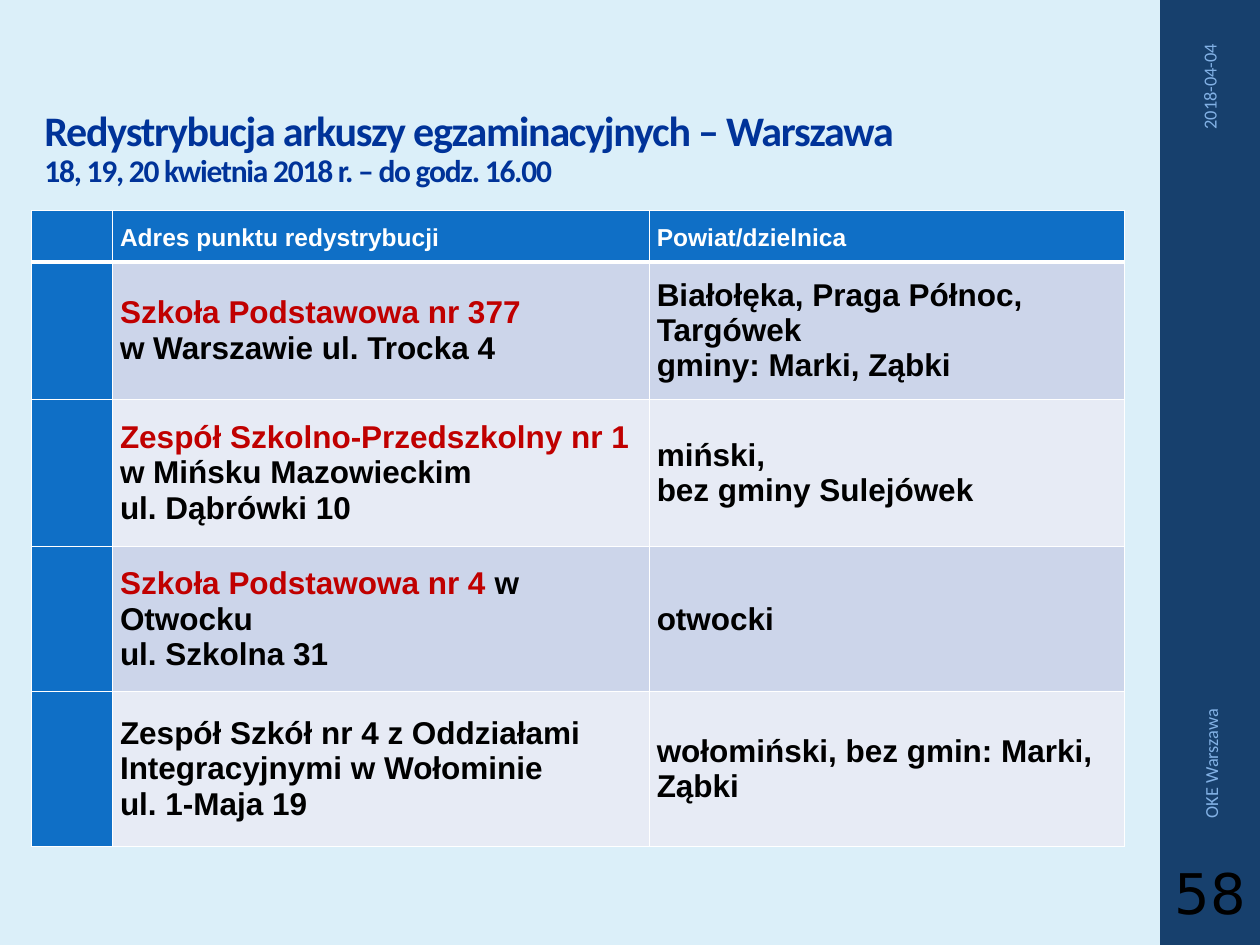
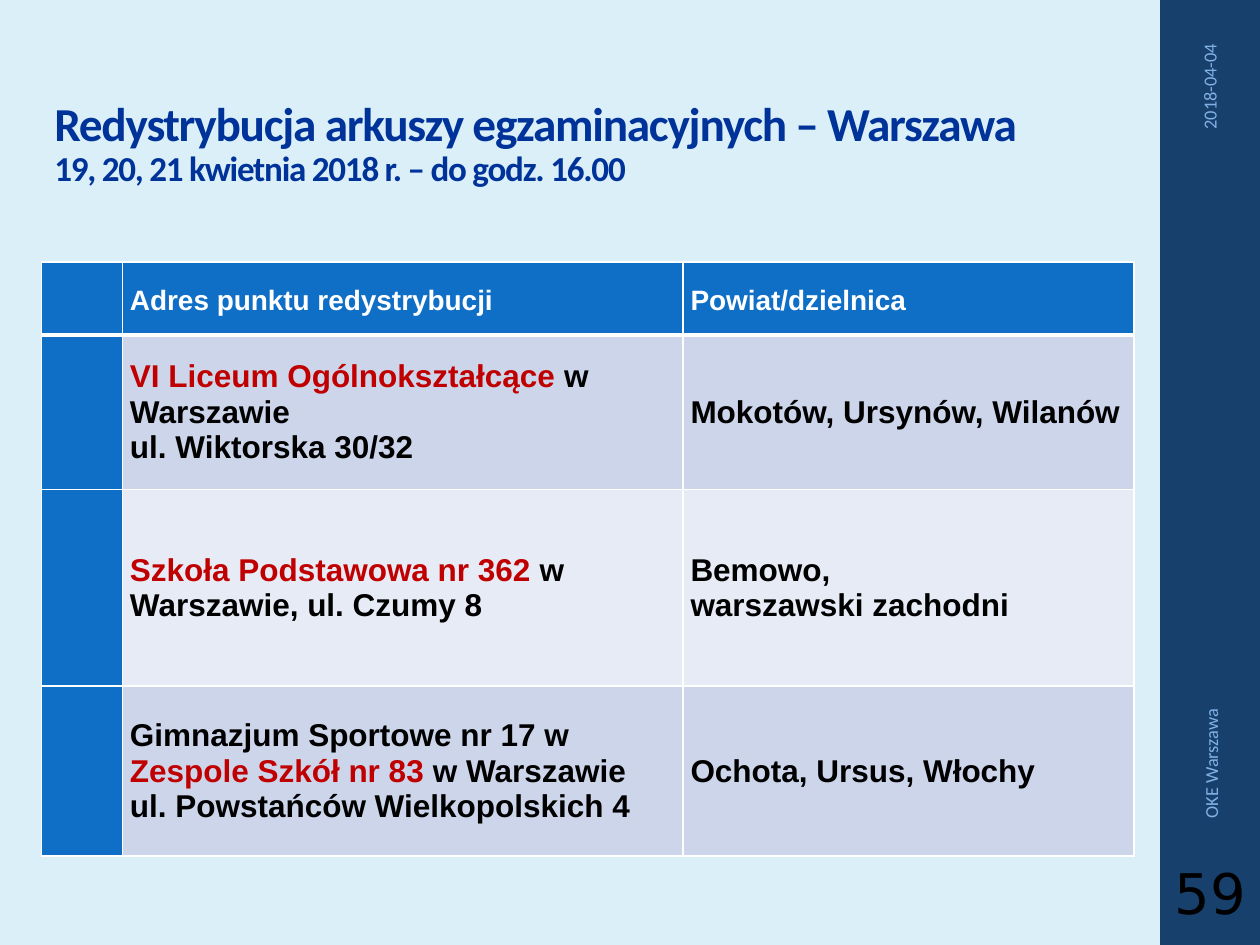
"""Builds two slides listing where exam papers are redistributed around Warsaw."""
from copy import deepcopy
from dataclasses import dataclass

from lxml import etree
from pptx import Presentation
from pptx.dml.color import RGBColor
from pptx.enum.shapes import MSO_SHAPE
from pptx.enum.text import MSO_ANCHOR, MSO_AUTO_SIZE, PP_ALIGN
from pptx.oxml.ns import qn
from pptx.util import Cm, Pt

LEFT, CENTER, RIGHT = PP_ALIGN.LEFT, PP_ALIGN.CENTER, PP_ALIGN.RIGHT
MIDDLE, BOTTOM = MSO_ANCHOR.MIDDLE, MSO_ANCHOR.BOTTOM
RECTANGLE = MSO_SHAPE.RECTANGLE
NO_AUTOFIT = MSO_AUTO_SIZE.NONE


@dataclass(frozen=True)
class Theme:
    """Colours, fonts and type sizes of the deck."""
    background: str = "DBEFF9"
    band: str = "17406D"
    title: str = "003399"
    footer: str = "82B1E5"
    header: str = "0F6FC6"
    stripes: tuple = ("CCD5EA", "E7EBF5")
    text: str = "000000"
    accent: str = "C00000"
    white: str = "FFFFFF"
    title_font: str = "Calibri"
    table_font: str = "Arial"
    number_font: str = "DejaVu Sans"
    body_size: float = 18
    footer_size: float = 10.5
    number_size: float = 32


THEME = Theme()
HEADING = "Redystrybucja arkuszy egzaminacyjnych – Warszawa"
COLUMN_NAMES = ("Adres punktu redystrybucji", "Powiat/dzielnica")
DATE = "2018-04-04"
OFFICE = "OKE Warszawa"
FIRST_NUMBER = 58

# Asterisks enclose the accented part of an address.
SCHEDULES = [
    {
        "dates": "18, 19, 20 kwietnia 2018 r. – do godz. 16.00",
        "title_sizes": (24, 18),
        "header_size": 14,
        "left": 0.64,
        "table_top": 4.24,
        "widths": (1.63, 10.82, 9.58),
        "heights": (1.04, 2.77, 2.97, 2.92, 3.12),
        "points": [
            (["*Szkoła Podstawowa nr 377*", "w Warszawie ul. Trocka 4"],
             ["Białołęka, Praga Północ, Targówek", "gminy: Marki, Ząbki"]),
            (["*Zespół Szkolno-Przedszkolny nr 1*", "w Mińsku Mazowieckim",
              "ul. Dąbrówki 10"],
             ["miński,", "bez gminy Sulejówek"]),
            (["*Szkoła Podstawowa nr 4 *w Otwocku", "ul. Szkolna 31"],
             ["otwocki"]),
            (["Zespół Szkół nr 4 z Oddziałami Integracyjnymi w Wołominie",
              "ul. 1-Maja 19"],
             ["wołomiński, bez gmin: Marki, Ząbki"]),
        ],
    },
    {
        "dates": "19, 20, 21 kwietnia 2018 r. – do godz. 16.00",
        "title_sizes": (27, 20),
        "header_size": 16,
        "left": 0.84,
        "table_top": 5.28,
        "widths": (1.63, 11.3, 9.09),
        "heights": (1.47, 3.12, 3.96, 3.43),
        "points": [
            (["*VI Liceum Ogólnokształcące *w Warszawie", "ul. Wiktorska 30/32"],
             ["Mokotów, Ursynów, Wilanów"]),
            (["*Szkoła Podstawowa nr 362* w Warszawie, ul. Czumy 8"],
             ["Bemowo,", "warszawski zachodni"]),
            (["Gimnazjum Sportowe nr 17 w *Zespole Szkół nr 83* w Warszawie",
              "ul. Powstańców Wielkopolskich 4"],
             ["Ochota, Ursus, Włochy"]),
        ],
    },
]


def style(run, font, size, colour, bold=False):
    """Format one run."""
    run.font.name = font
    run.font.size = Pt(size)
    run.font.bold = bold
    run.font.color.rgb = RGBColor.from_string(colour)


def paint(target, colour):
    """Give a shape, cell or background a solid fill."""
    target.fill.solid()
    target.fill.fore_color.rgb = RGBColor.from_string(colour)


def add_band(slide, layout):
    """Draw the side band and keep it in the shared layout."""
    band = slide.shapes.add_shape(RECTANGLE, Cm(23.39), 0, Cm(2.03), Cm(19.05))
    paint(band, THEME.band)
    band.line.fill.background()
    band.shadow.inherit = False
    band.element.nvSpPr.cNvPr.id = 20
    layout.shapes.element.insert(2, band.element)


def add_title(slide, schedule):
    """Fill the title placeholder with the heading and the dates."""
    title = slide.shapes.title
    title.left, title.top = Cm(schedule["left"]), Cm(0.76)
    title.width, title.height = Cm(22.02), Cm(3.18)
    frame = title.text_frame
    frame.auto_size = NO_AUTOFIT
    frame.vertical_anchor = BOTTOM
    frame.text = f"{HEADING}\v{schedule['dates']}"
    paragraph = frame.paragraphs[0]
    paragraph.alignment = LEFT
    paragraph.line_spacing = 0.9
    for run, size in zip(paragraph.runs, schedule["title_sizes"]):
        style(run, THEME.title_font, size, THEME.title, bold=True)
        run.font._element.set("spc", "-70")
    line_break = paragraph._p.find(qn("a:br"))
    line_break.append(deepcopy(paragraph.runs[0].font._element))


def add_borders(cell, row):
    """Rule a cell in white, with a heavy line below the header."""
    properties = cell._tc.get_or_add_tcPr()
    heavy = {0: "lnB", 1: "lnT"}.get(row)
    for side in ("lnL", "lnR", "lnT", "lnB"):
        width = Pt(3 if side == heavy else 1)
        line = etree.SubElement(properties, qn(f"a:{side}"), w=str(width))
        fill = etree.SubElement(line, qn("a:solidFill"))
        etree.SubElement(fill, qn("a:srgbClr"), val=THEME.white)


def write_cell(cell, lines, size, colour, spacing=None):
    """Write the lines of a cell, accenting the marked parts."""
    for index, line in enumerate(lines):
        frame = cell.text_frame
        paragraph = frame.add_paragraph() if index else frame.paragraphs[0]
        paragraph.line_spacing = spacing
        for position, part in enumerate(line.split("*")):
            if part:
                run = paragraph.add_run()
                run.text = part
                style(run, THEME.table_font, size,
                      THEME.accent if position % 2 else colour, bold=True)


def add_points(slide, schedule):
    """Add the table of redistribution points."""
    widths, heights = schedule["widths"], schedule["heights"]
    table = slide.shapes.add_table(
        len(heights), len(widths), Cm(schedule["left"]),
        Cm(schedule["table_top"]), Cm(sum(widths)), Cm(sum(heights))).table
    for column, width in zip(table.columns, widths):
        column.width = Cm(width)
    for row, height in zip(table.rows, heights):
        row.height = Cm(height)
    rows = [[[name] for name in COLUMN_NAMES], *schedule["points"]]
    for row, texts in enumerate(rows):
        for column, lines in enumerate([[], *texts]):
            cell = table.cell(row, column)
            cell.margin_left = cell.margin_right = Cm(0.15)
            cell.margin_top = cell.margin_bottom = 0
            cell.vertical_anchor = MIDDLE
            add_borders(cell, row)
            if row == 0 or column == 0:
                paint(cell, THEME.header)
            else:
                paint(cell, THEME.stripes[(row - 1) % 2])
            if row == 0:
                write_cell(cell, lines, schedule["header_size"], THEME.white, 1.15)
            else:
                write_cell(cell, lines, THEME.body_size, THEME.text)


def add_label(slide, text, box, align, font, size, colour):
    """Add a one-line text box on the band and return it."""
    label = slide.shapes.add_textbox(*(Cm(length) for length in box))
    frame = label.text_frame
    frame.word_wrap = True
    frame.vertical_anchor = MIDDLE
    frame.text = text
    frame.paragraphs[0].alignment = align
    style(frame.paragraphs[0].runs[0], font, size, colour)
    return label


def add_footers(slide, number):
    """Add the date, the office and the slide number."""
    for text, box, align in ((DATE, (21.74, 2.9, 5.28, 0.76), RIGHT),
                             (OFFICE, (19.43, 11.38, 9.96, 0.76), LEFT)):
        label = add_label(slide, text, box, align, THEME.title_font,
                          THEME.footer_size, THEME.footer)
        label.rotation = 270
    page = add_label(slide, str(number), (23.44, 17.15, 1.91, 1.65), CENTER,
                     THEME.number_font, THEME.number_size, THEME.text)
    page.text_frame.margin_left = page.text_frame.margin_right = Cm(0.08)


def main():
    """Build and save the deck."""
    deck = Presentation()
    deck.slide_width, deck.slide_height = Cm(25.4), Cm(19.05)
    paint(deck.slide_master.background, THEME.background)
    layout = deck.slide_layouts[5]
    for index, schedule in enumerate(SCHEDULES):
        slide = deck.slides.add_slide(layout)
        if index == 0:
            add_band(slide, layout)
        add_title(slide, schedule)
        add_points(slide, schedule)
        add_footers(slide, FIRST_NUMBER + index)
    deck.save("out.pptx")


if __name__ == "__main__":
    main()
